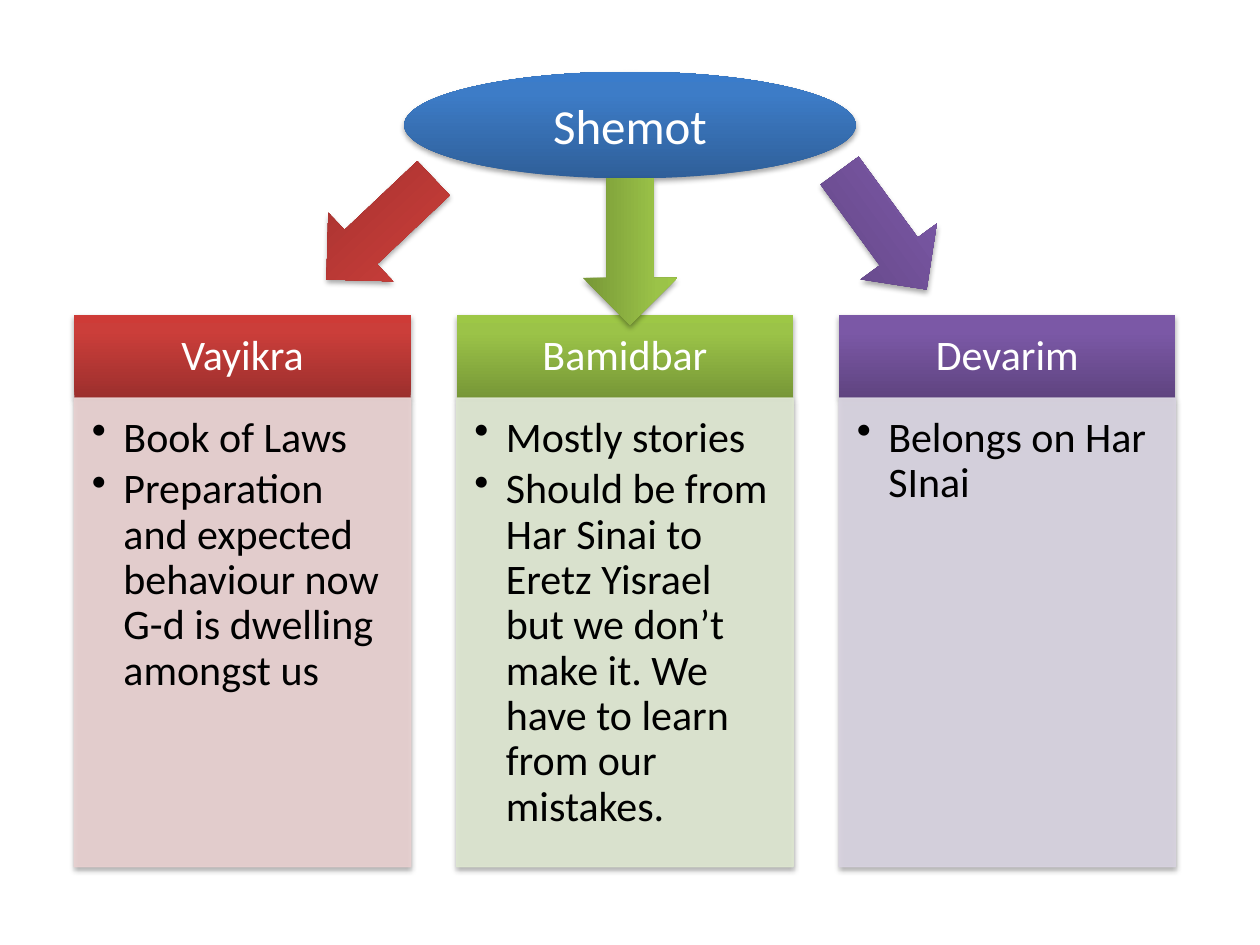
import pptx
import pptx.util
import pptx.dml.color
import pptx.enum.shapes
import pptx.enum.text
import pptx.oxml
import pptx.oxml.ns

Pt = pptx.util.Pt
Shape = pptx.enum.shapes.MSO_SHAPE
Align = pptx.enum.text.PP_ALIGN
Anchor = pptx.enum.text.MSO_ANCHOR
NAMESPACE = pptx.oxml.ns.nsdecls("a")

COLORS = {
    "white": "FFFFFF",
    "black": "000000",
    "red body": "E8D0D0",
    "green body": "DEE7D1",
    "purple body": "D8D3E0",
}
# Dark bottom, light upper part, top edge
GRADIENTS = {
    "blue": ("2F5F99", "3D7CC7", "3A7CCB"),
    "red": ("9C2F2D", "CB3E3A", "CE3B37"),
    "green": ("779737", "9BC348", "9DC746"),
    "purple": ("5F4480", "7B58A6", "7C57A8"),
}
STOPS = (0, 80, 100)

COLUMN_LEFT, COLUMN_PITCH, COLUMN_WIDTH = 42.5, 218.5, 192.25
HEADER_TOP, HEADER_HEIGHT, BODY_HEIGHT = 180, 47.5, 267.8
ARROW_WIDTH, ARROW_HEIGHT = 84.25, 54

# Colour, heading, points, arrow left, arrow top, arrow rotation
COLUMNS = [
    ("red", "Vayikra",
     ["Book of Laws",
      "Preparation and expected behaviour now G-d is dwelling amongst us"],
     175, 103.75, 136.6),
    ("green", "Bamidbar",
     ["Mostly stories",
      "Should be from Har Sinai to Eretz Yisrael but we don’t make it. "
      "We have to learn from our mistakes."],
     317.9, 116.7, 90),
    ("purple", "Devarim", ["Belongs on Har SInai"], 462.5, 104.5, 53.8),
]


def add_shadowed_shape(slide, kind, left, top, width, height):
    shape = slide.shapes.add_shape(kind, Pt(left), Pt(top), Pt(width), Pt(height))
    shape.line.fill.background()
    shape.shadow.inherit = False
    effects = shape._element.spPr.find(pptx.oxml.ns.qn("a:effectLst"))
    effects.append(pptx.oxml.parse_xml(
        f'<a:outerShdw {NAMESPACE} blurRad="{Pt(3.1)}" dist="{Pt(1.8)}" '
        f'dir="5400000" rotWithShape="0"><a:srgbClr val="{COLORS["black"]}">'
        '<a:alpha val="35000"/></a:srgbClr></a:outerShdw>'))
    return shape


def add_gradient_shape(slide, kind, left, top, width, height, gradient):
    shape = add_shadowed_shape(slide, kind, left, top, width, height)
    shape.fill.gradient()
    shape.fill.gradient_angle = 90
    stop_list = shape._element.spPr.find(".//" + pptx.oxml.ns.qn("a:gsLst"))
    for stop in list(stop_list):
        stop_list.remove(stop)
    for position, color in zip(STOPS, GRADIENTS[gradient]):
        stop_list.append(pptx.oxml.parse_xml(
            f'<a:gs {NAMESPACE} pos="{position * 1000}">'
            f'<a:srgbClr val="{color}"/></a:gs>'))
    return shape


def add_tinted_box(slide, left, top, width, height, color):
    shape = add_shadowed_shape(slide, Shape.RECTANGLE, left, top, width, height)
    shape.line.width = Pt(0.75)
    for fill in (shape.fill, shape.line.fill):
        fill.solid()
        fill.fore_color.rgb = pptx.dml.color.RGBColor.from_string(COLORS[color])
    for element in shape._element.spPr.findall(
            ".//" + pptx.oxml.ns.qn("a:solidFill") + "/" + pptx.oxml.ns.qn("a:srgbClr")):
        element.append(pptx.oxml.parse_xml(f'<a:alpha {NAMESPACE} val="90000"/>'))
    return shape


def write_text(shape, lines, size=24, color="white", align=Align.CENTER,
               anchor=Anchor.MIDDLE, insets=(7.2, 3.6, 7.2, 3.6),
               line_spacing=None, space_after=0, bullets=False):
    frame = shape.text_frame
    frame.word_wrap = True
    frame.vertical_anchor = anchor
    (frame.margin_left, frame.margin_top,
     frame.margin_right, frame.margin_bottom) = map(Pt, insets)
    for index, line in enumerate(lines):
        paragraph = frame.add_paragraph() if index else frame.paragraphs[0]
        paragraph.alignment = align
        paragraph.line_spacing = line_spacing
        paragraph.space_after = Pt(space_after)
        run = paragraph.add_run()
        run.text = line
        run.font.name = "Calibri"
        run.font.size = Pt(size)
        run.font.color.rgb = pptx.dml.color.RGBColor.from_string(COLORS[color])
        if bullets:
            properties = paragraph._p.get_or_add_pPr()
            properties.set("marL", str(Pt(18)))
            properties.set("indent", str(Pt(-18)))
            properties.append(pptx.oxml.parse_xml(f'<a:buChar {NAMESPACE} char="•"/>'))


def add_column(slide, left, color, heading, points):
    header = add_gradient_shape(slide, Shape.RECTANGLE, left, HEADER_TOP,
                                COLUMN_WIDTH, HEADER_HEIGHT, color)
    write_text(header, [heading], insets=(13.7, 7.9, 13.7, 7.9), line_spacing=0.9)
    body = add_tinted_box(slide, left, HEADER_TOP + HEADER_HEIGHT,
                          COLUMN_WIDTH, BODY_HEIGHT, color + " body")
    write_text(body, points, color="black", align=Align.LEFT, anchor=Anchor.TOP,
               insets=(10.1, 10.1, 13.7, 15.1), line_spacing=0.9,
               space_after=3.6, bullets=True)


def main():
    presentation = pptx.Presentation()
    presentation.slide_width, presentation.slide_height = Pt(720), Pt(540)
    slide = presentation.slides.add_slide(presentation.slide_layouts[6])

    # Three columns
    for index, (color, heading, points, *_) in enumerate(COLUMNS):
        add_column(slide, COLUMN_LEFT + index * COLUMN_PITCH, color, heading, points)

    # Source of the three branches
    ellipse = add_gradient_shape(slide, Shape.OVAL, 231, 41, 258, 61, "blue")
    write_text(ellipse, ["Shemot"], size=28)

    # Arrows towards the columns
    for color, _, _, left, top, rotation in COLUMNS:
        arrow = add_gradient_shape(slide, Shape.RIGHT_ARROW, left, top,
                                   ARROW_WIDTH, ARROW_HEIGHT, color)
        arrow.rotation = rotation

    presentation.save("out.pptx")


if __name__ == "__main__":
    main()
